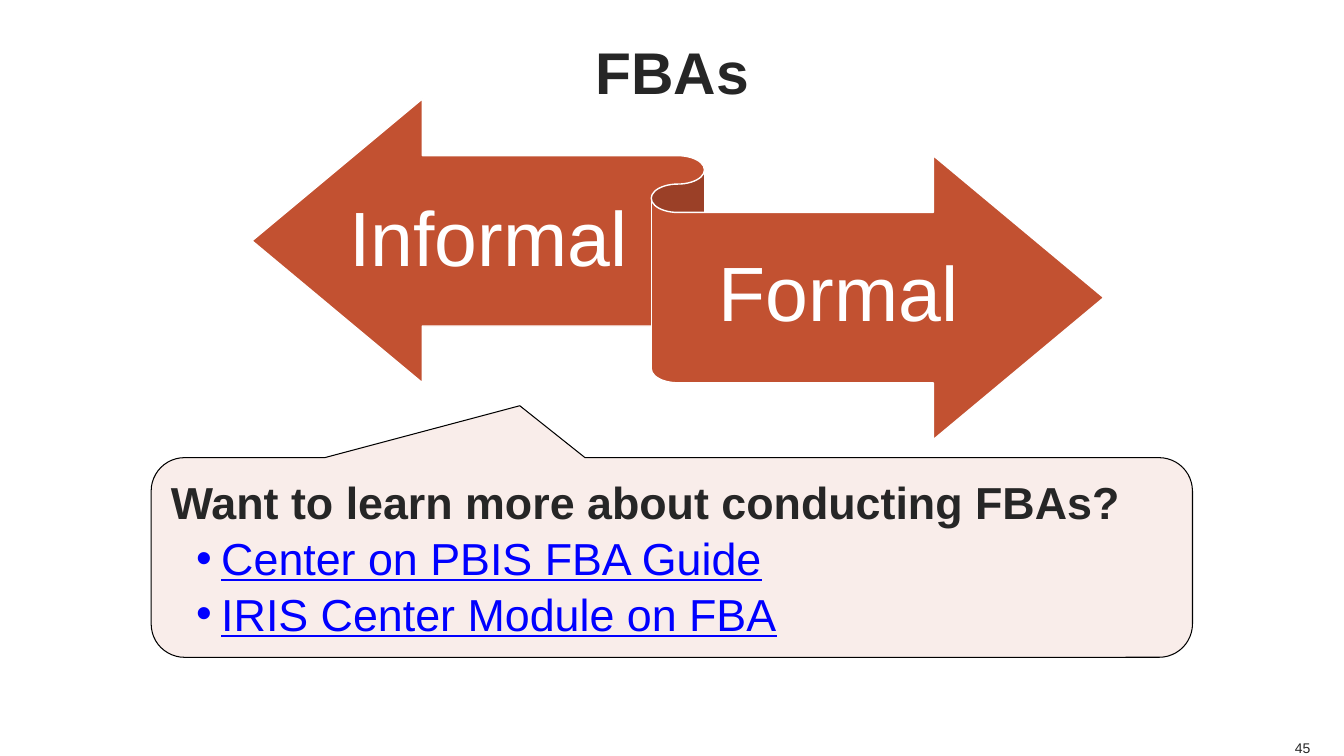
from lxml import etree
from pptx import Presentation
from pptx.dml.color import RGBColor
from pptx.enum.shapes import MSO_SHAPE
from pptx.enum.text import MSO_ANCHOR, PP_ALIGN
from pptx.oxml.ns import qn
from pptx.util import Pt

RIBBON = MSO_SHAPE.LEFT_RIGHT_RIBBON
CALLOUT = MSO_SHAPE.ROUNDED_RECTANGULAR_CALLOUT
MIDDLE, BOTTOM = MSO_ANCHOR.MIDDLE, MSO_ANCHOR.BOTTOM
LEFT, CENTER, RIGHT = PP_ALIGN.LEFT, PP_ALIGN.CENTER, PP_ALIGN.RIGHT
INK, WHITE, BLACK = "262626", "FFFFFF", "000000"
RUST, BLUSH, BLUE = "C25131", "F9EDEA", "0000FF"


def color(target, value):
    """Set a colour format from a hex string."""
    target.rgb = RGBColor.from_string(value)


def style(para, size, tint, align=LEFT, bold=False, under=False):
    """Format a paragraph and its runs."""
    para.alignment = align
    for run in para.runs:
        font = run.font
        font.name, font.size = "Arial", Pt(size)
        font.bold, font.underline = bold, under
        color(font.color, tint)


def label(shapes, text, box, size, tint, align=CENTER, bold=False,
          anchor=MIDDLE, wrap=True, pads=(0, 0), lead=None):
    """Add a text box with one paragraph."""
    frame = shapes.add_textbox(*map(Pt, box)).text_frame
    frame.word_wrap, frame.vertical_anchor = wrap, anchor
    frame.margin_left = frame.margin_right = 0
    frame.margin_top, frame.margin_bottom = map(Pt, pads)
    frame.text = text
    para = frame.paragraphs[0]
    para.line_spacing = lead
    style(para, size, tint, align, bold)


def shape(shapes, kind, box, fill, line, width):
    """Add a filled and outlined preset shape."""
    item = shapes.add_shape(kind, *map(Pt, box))
    item.shadow.inherit = False
    item.fill.solid()
    color(item.fill.fore_color, fill)
    item.line.width = Pt(width)
    color(item.line.color, line)
    return item


def bullet(para):
    """Give a paragraph a hanging bullet."""
    props = para._p.get_or_add_pPr()
    props.set("marL", str(Pt(36)))
    props.set("indent", str(-Pt(18)))
    etree.SubElement(props, qn("a:buFont")).set("typeface", "Arial")
    etree.SubElement(props, qn("a:buChar")).set("char", "•")


def callout(shapes, box, head, items):
    """Add a callout with a heading and a bulleted list."""
    item = shape(shapes, CALLOUT, box, BLUSH, BLACK, 0.75)
    for index, value in enumerate((-0.146, -0.76, 0.167)):
        item.adjustments[index] = value
    frame = item.text_frame
    frame.word_wrap, frame.vertical_anchor = True, MIDDLE
    frame.text = head
    style(frame.paragraphs[0], 32, INK, bold=True)
    for text in items:
        para = frame.add_paragraph()
        para.text = text
        bullet(para)
        para.space_before = Pt(1.4)
        style(para, 32, BLUE, under=True)


def main():
    """Build the slide and save it."""
    deck = Presentation()
    deck.slide_width, deck.slide_height = Pt(960), Pt(540)
    shapes = deck.slides.add_slide(deck.slide_layouts[6]).shapes
    label(shapes, "FBAs", (36, 0, 888, 100.8), 42, INK, bold=True)
    label(shapes, "45", (923.8, 527.8, 12.2, 12.2), 10, INK, RIGHT,
          anchor=BOTTOM, wrap=False)
    group = shapes.add_group_shape().shapes
    shape(group, RIBBON, (180, 70.6, 608.4, 243.4), RUST, WHITE, 1)
    for text, left, top, width in (("Informal", 248.4, 113.8, 200.9),
                                   ("Formal", 480.2, 152.6, 237.6)):
        label(group, text, (left, top, width, 119.5), 55, WHITE,
              pads=(15.1, 16.6), lead=0.9)
    callout(shapes, (108, 326.9, 743.8, 142.6),
            "Want to learn more about conducting FBAs?",
            ("Center on PBIS FBA Guide", "IRIS Center Module on FBA"))
    deck.save("out.pptx")


if __name__ == "__main__":
    main()
